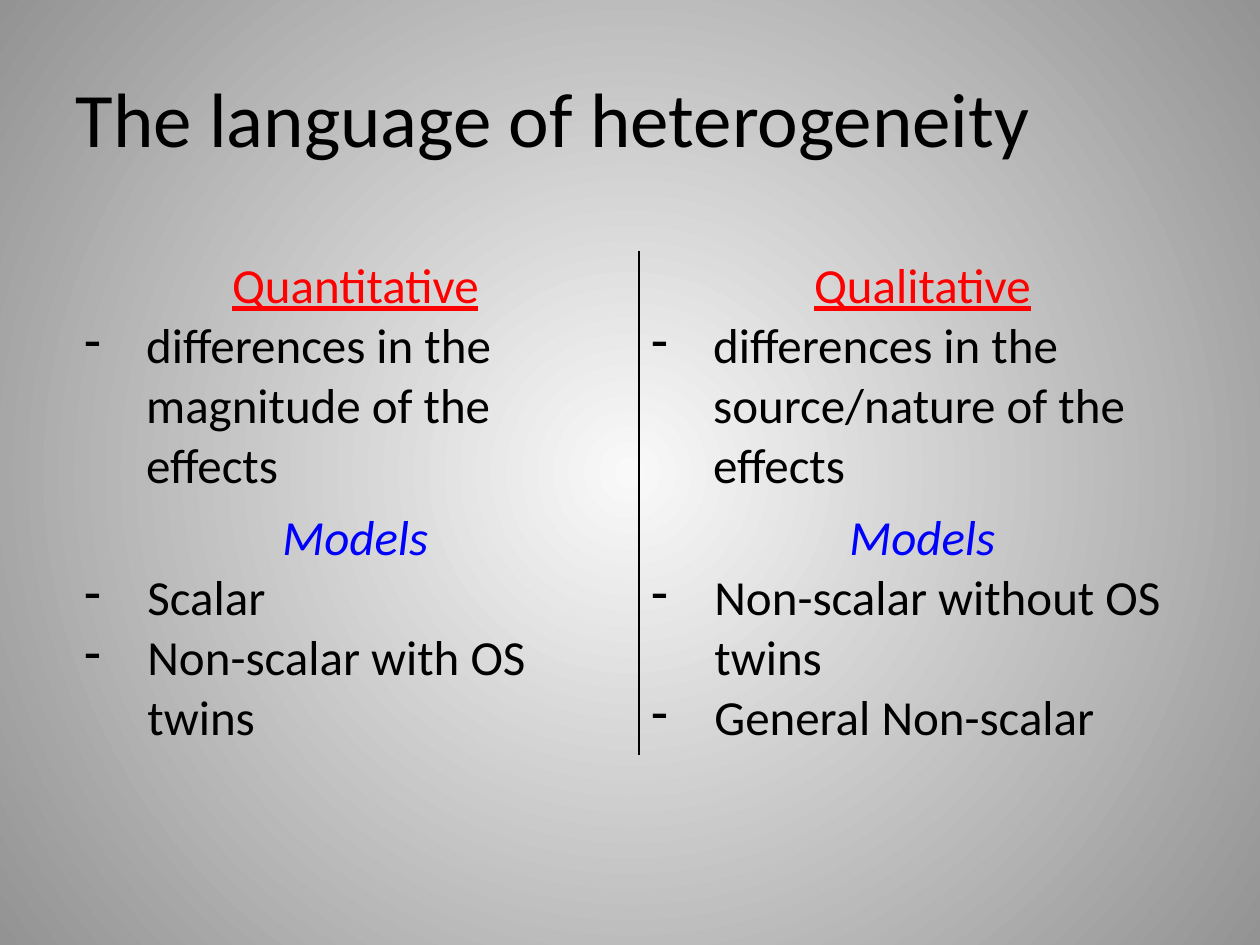
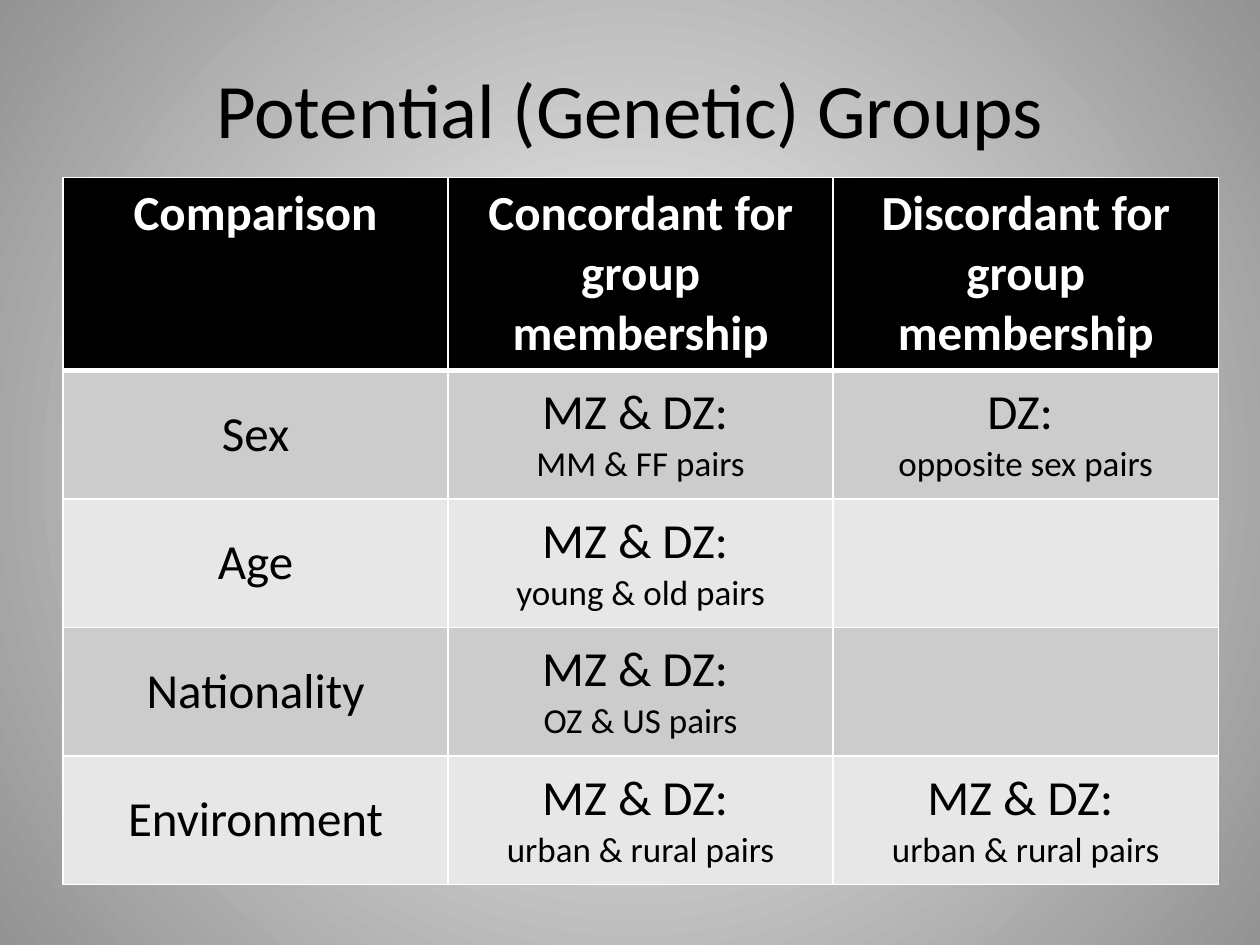
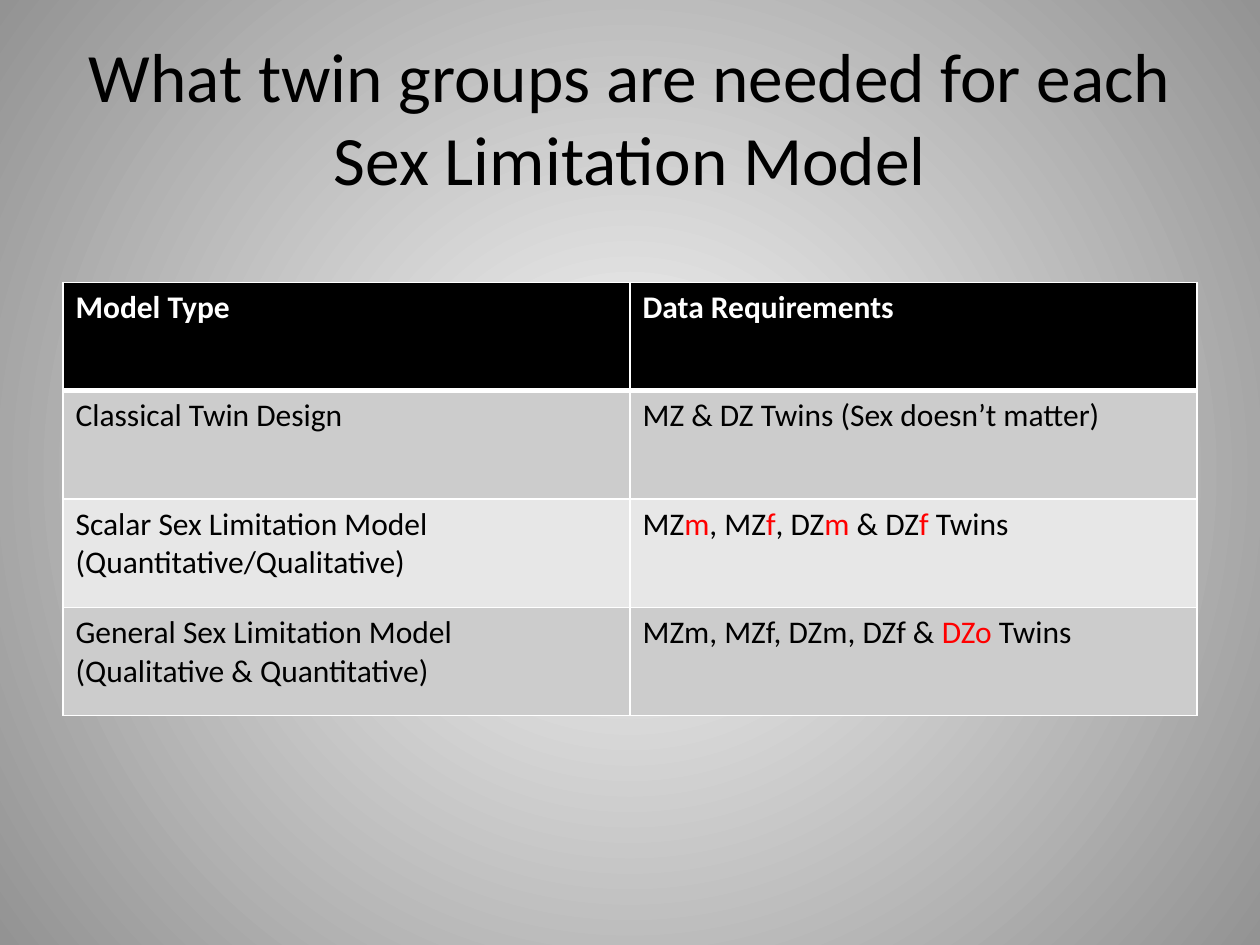
import dataclasses

import lxml.etree
import pptx
import pptx.dml.color
import pptx.enum.text
import pptx.oxml.ns
import pptx.util

Inches = pptx.util.Inches
Pt = pptx.util.Pt
Align = pptx.enum.text.PP_ALIGN
Anchor = pptx.enum.text.MSO_ANCHOR
qn = pptx.oxml.ns.qn


@dataclasses.dataclass(frozen=True)
class Theme:
    font: str = "Calibri"
    ink: str = "000000"
    paper: str = "FFFFFF"
    accent: str = "FF0000"
    models: str = "0000FF"
    bands: tuple = ("CCCCCC", "E7E7E7")
    glow: tuple = ("F9F9F9", "939393")
    title: float = 44
    long_title: float = 39.6
    large: float = 28
    medium: float = 20
    small: float = 18
    no_table_style: str = "{2D5ABB26-0587-4C30-8999-92F81FD0307C}"


THEME = Theme()


@dataclasses.dataclass(frozen=True)
class Line:
    """One paragraph; words between asterisks take the accent colour."""
    text: str
    size: float = THEME.large
    color: str = THEME.ink
    align: Align = Align.CENTER
    bold: bool = False
    italic: bool = False
    underline: bool = False
    indent: float = 0


def rgb(color):
    return pptx.dml.color.RGBColor.from_string(color)


class Slides:
    def __init__(self, theme):
        self.theme = theme
        self.deck = pptx.Presentation()
        self.deck.slide_width, self.deck.slide_height = Inches(10), Inches(7.5)
        self.page = None
        self.paint_background()

    def paint_background(self):
        """Give the master a round gradient, light in the middle."""
        master = self.deck.slide_master
        fill = master.background.fill
        fill.gradient()
        for stop, color in zip(fill.gradient_stops, self.theme.glow):
            stop.color.rgb = rgb(color)
        gradient = next(master.element.iter(qn("a:gradFill")))
        gradient.remove(gradient.find(qn("a:lin")))
        circle = lxml.etree.SubElement(gradient, qn("a:path"), path="circle")
        lxml.etree.SubElement(circle, qn("a:fillToRect"), dict.fromkeys("ltrb", "50000"))

    def add_page(self, title, height=1.25, size=THEME.title, align=Align.CENTER):
        self.page = self.deck.slides.add_slide(self.deck.slide_layouts[5])
        box = self.page.shapes.title
        box.left, box.top = Inches(0.5), Inches(0.3)
        box.width, box.height = Inches(9), Inches(height)
        frame = box.text_frame
        frame.auto_size = pptx.enum.text.MSO_AUTO_SIZE.NONE
        frame.vertical_anchor = Anchor.MIDDLE
        self.add_lines(frame, [Line(title, size, align=align)])

    def add_lines(self, frame, lines):
        for number, line in enumerate(lines):
            para = frame.add_paragraph() if number else frame.paragraphs[0]
            para.alignment = line.align
            font = para.font
            font.name, font.size = self.theme.font, Pt(line.size)
            font.bold, font.italic, font.underline = line.bold, line.italic, line.underline
            font.color.rgb = rgb(line.color)
            if line.indent:
                self.hang_dash(para, line.indent)
            for position, text in enumerate(line.text.split("*")):
                span = para.add_run()
                span.text = text
                if position % 2:
                    span.font.color.rgb = rgb(self.theme.accent)

    def hang_dash(self, para, indent):
        properties = para._p.get_or_add_pPr()
        properties.set("marL", str(Inches(indent)))
        properties.set("indent", str(-Inches(indent)))
        bullet = lxml.etree.Element(qn("a:buChar"), char="-")
        properties.find(qn("a:defRPr")).addprevious(bullet)

    def border(self, cell, color, **widths):
        """Draw the sides named L, R, T and B, in that order, with widths in points."""
        properties = cell._tc.get_or_add_tcPr()
        for side, width in widths.items():
            edge = lxml.etree.SubElement(properties, qn(f"a:ln{side}"), w=str(Pt(width)))
            solid = lxml.etree.SubElement(edge, qn("a:solidFill"))
            lxml.etree.SubElement(solid, qn("a:srgbClr"), val=color)

    def add_table(self, left, top, width, heights, rows):
        columns = len(rows[0])
        holder = self.page.shapes.add_table(
            len(rows), columns, Inches(left), Inches(top), Inches(width), Inches(sum(heights)))
        next(holder.element.iter(qn("a:tableStyleId"))).text = self.theme.no_table_style
        table = holder.table
        table.first_row = table.horz_banding = False
        for column in table.columns:
            column.width = Inches(width / columns)
        for row, height, texts in zip(table.rows, heights, rows):
            row.height = Inches(height)
            for cell, lines in zip(row.cells, texts):
                self.add_lines(cell.text_frame, lines)
        return table

    def add_banded_table(self, left, top, width, heights, rows, body_anchor):
        table = self.add_table(left, top, width, heights, rows)
        table.first_row = table.horz_banding = True
        for number, row in enumerate(table.rows):
            color = self.theme.bands[(number - 1) % 2] if number else self.theme.ink
            for cell in row.cells:
                self.border(cell, self.theme.paper, L=1, R=1,
                            T=3 if number == 1 else 1, B=1 if number else 3)
                cell.fill.solid()
                cell.fill.fore_color.rgb = rgb(color)
                cell.vertical_anchor = body_anchor if number else Anchor.TOP

    def add_split_table(self, left, top, width, heights, rows):
        """Two open columns with one rule between them."""
        table = self.add_table(left, top, width, heights, rows)
        for row in table.rows:
            self.border(row.cells[0], self.theme.ink, R=1)
            self.border(row.cells[1], self.theme.ink, L=1)
            for cell in row.cells:
                cell.fill.background()


def kind(name, difference):
    return [Line(name, color=THEME.accent, underline=True),
            Line(difference, align=Align.LEFT, indent=0.49)]


def models(*names):
    return [Line("Models", color=THEME.models, italic=True),
            *(Line(name, align=Align.LEFT, indent=0.5) for name in names)]


def pairs(zygosity, members):
    return [Line(zygosity + ": "), Line(members, THEME.medium)]


def heading(text, size=THEME.large, align=Align.CENTER):
    return [Line(text, size, THEME.paper, align, bold=True)]


def details(*texts):
    return [Line(text, THEME.small, align=Align.LEFT) for text in texts]


def main():
    slides = Slides(THEME)

    slides.add_page("The language of heterogeneity", align=Align.LEFT)
    slides.add_split_table(0.57, 1.99, 9, [2, 2], [
        [kind("Quantitative", "differences in the magnitude of the effects"),
         kind("Qualitative", "differences in the source/nature of the effects")],
        [models("Scalar", "Non-scalar with OS twins"),
         models("Non-scalar without OS twins", "General Non-scalar")],
    ])

    slides.add_page("Potential (Genetic) Groups", height=1.11)
    both = "MZ & DZ"
    titles = ["Comparison", "Concordant for group membership", "Discordant for group membership"]
    slides.add_banded_table(0.5, 1.41, 9.17, [1.53] + [1.02] * 4, [
        [heading(title) for title in titles],
        [[Line("Sex")], pairs(both, "MM & FF pairs"), pairs("DZ", "opposite sex pairs")],
        [[Line("Age")], pairs(both, "young & old pairs"), []],
        [[Line("Nationality")], pairs(both, "OZ & US pairs"), []],
        [[Line("Environment")], *[pairs(both, "urban & rural pairs")] * 2],
    ], Anchor.MIDDLE)

    slides.add_page("What twin groups are needed for each Sex Limitation Model",
                    size=THEME.long_title)
    slides.add_banded_table(0.5, 2.24, 9, [0.86] * 4, [
        [heading(title, THEME.small, Align.LEFT) for title in ("Model Type", "Data Requirements")],
        [details("Classical Twin Design"), details("MZ & DZ Twins (Sex doesn’t matter)")],
        [details("Scalar Sex Limitation Model", "(Quantitative/Qualitative)"),
         details("MZ*m*, MZ*f*, DZ*m* & DZ*f* Twins")],
        [details("General Sex Limitation Model", "(Qualitative & Quantitative)"),
         details("MZm, MZf, DZm, DZf & *DZo* Twins")],
    ], Anchor.TOP)

    slides.deck.save("out.pptx")


if __name__ == "__main__":
    main()
